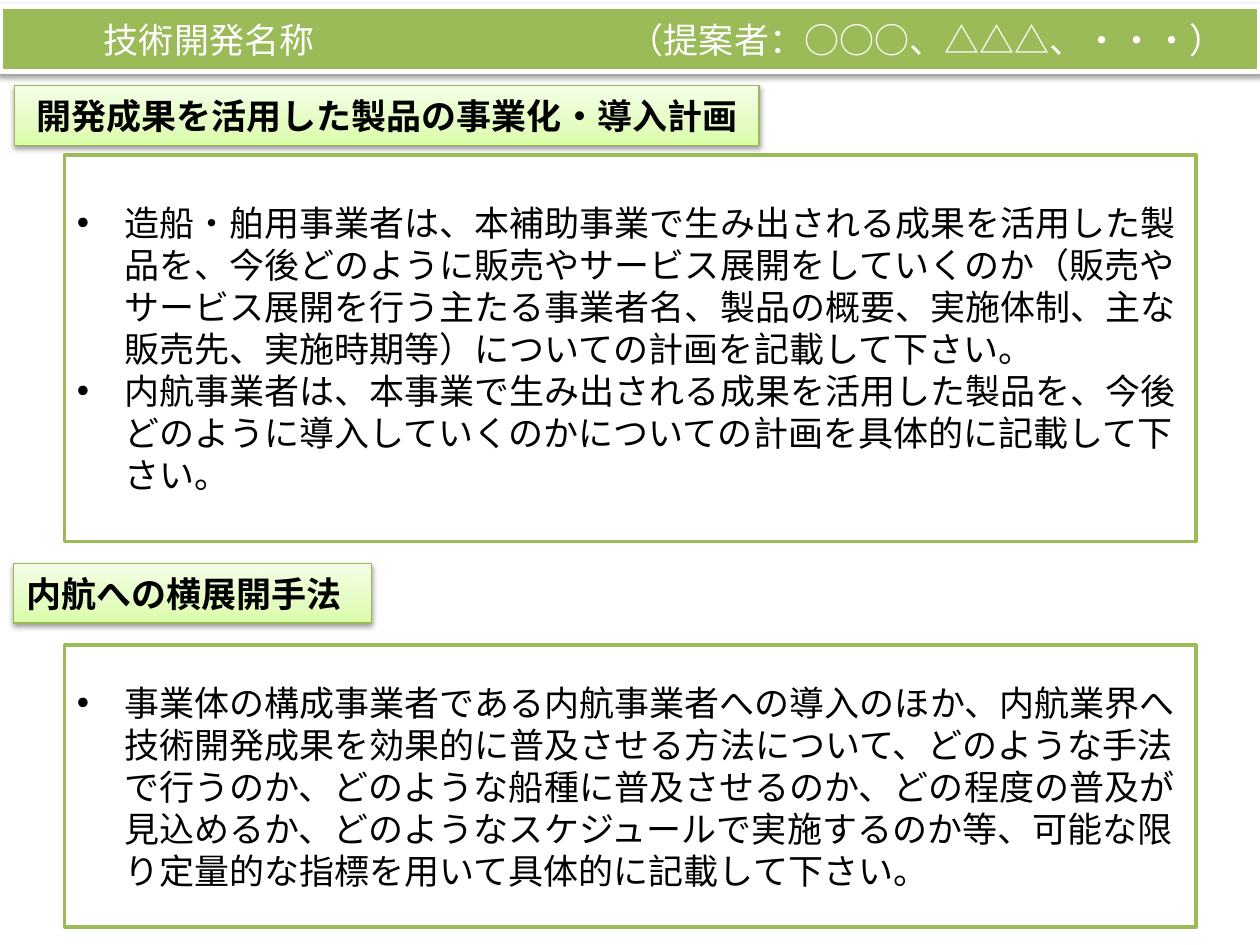
from copy import deepcopy

from lxml.etree import SubElement
from pptx import Presentation
from pptx.dml.color import RGBColor
from pptx.enum.shapes import MSO_SHAPE
from pptx.enum.text import MSO_ANCHOR, PP_ALIGN
from pptx.oxml.ns import qn
from pptx.util import Pt

GREEN = "9BBB59"
HEADING_STOPS = [(0, "DAFDA7"), (0.35, "E4FCC2"), (1, "F5FFE7")]
PLAN = [
    "造船・舶用事業者は、本補助事業で生み出される成果を活用した製品を、今後どのように販売やサービス展開をしていくのか"
    "（販売やサービス展開を行う主たる事業者名、製品の概要、実施体制、主な販売先、実施時期等）"
    "についての計画を記載して下さい。",
    "内航事業者は、本事業で生み出される成果を活用した製品を、今後どのように導入していくのかについての計画を"
    "具体的に記載して下さい。",
]
ROLLOUT = [
    "事業体の構成事業者である内航事業者への導入のほか、内航業界へ技術開発成果を効果的に普及させる方法について、"
    "どのような手法で行うのか、どのような船種に普及させるのか、どの程度の普及が見込めるか、"
    "どのようなスケジュールで実施するのか等、可能な限り定量的な指標を用いて具体的に記載して下さい。",
]


def rgb(color):
    return RGBColor.from_string(color)


def add_box(slide, left, top, width, height, line, weight):
    s = slide.shapes.add_shape(MSO_SHAPE.RECTANGLE, Pt(left), Pt(top), Pt(width), Pt(height))
    s.shadow.inherit = False
    s.line.color.rgb = rgb(line)
    s.line.width = Pt(weight)
    s.text_frame.word_wrap = True
    s.text_frame.vertical_anchor = MSO_ANCHOR.MIDDLE
    return s


def fill_solid(s, color):
    s.fill.solid()
    s.fill.fore_color.rgb = rgb(color)


def fill_gradient(s, stops):
    """Fill from bottom to top with three (position, colour) stops."""
    s.fill.gradient()
    s.fill.gradient_angle = 90
    gs_list = s.fill._xPr.find(qn("a:gradFill")).find(qn("a:gsLst"))
    gs_list.insert(1, deepcopy(gs_list[0]))
    for stop, (position, color) in zip(s.fill.gradient_stops, stops):
        stop.position = position
        stop.color.rgb = rgb(color)


def add_shadow(s):
    effects = s._element.spPr.find(qn("a:effectLst"))
    shadow = SubElement(effects, qn("a:outerShdw"), blurRad=str(Pt(3.1)), dist=str(Pt(1.6)),
                        dir="5400000", rotWithShape="0")
    color = SubElement(shadow, qn("a:srgbClr"), val="000000")
    SubElement(color, qn("a:alpha"), val="38000")


def add_run(p, text, color="000000", bold=False):
    r = p.add_run()
    r.text = text
    r.font.name = "Calibri"
    r.font.size = Pt(20)
    r.font.bold = bold
    r.font.color.rgb = rgb(color)


def add_title(slide, name, proposer):
    s = add_box(slide, 0, 3.6, 720, 37.4, "FFFFFF", 3)
    fill_solid(s, GREEN)
    add_shadow(s)
    tf = s.text_frame
    tf.margin_left = Pt(59.4)
    p = tf.paragraphs[0]
    p.alignment = PP_ALIGN.LEFT
    tabs = SubElement(p._p.get_or_add_pPr(), qn("a:tabLst"))
    SubElement(tabs, qn("a:tab"), pos=str(Pt(300)), algn="l")
    add_run(p, f"{name}\t{proposer}", "FFFFFF")


def add_heading(slide, left, top, width, text, align):
    s = add_box(slide, left, top, width, 34, "98B955", 0.75)
    fill_gradient(s, HEADING_STOPS)
    add_shadow(s)
    p = s.text_frame.paragraphs[0]
    p.alignment = align
    add_run(p, text, bold=True)


def add_bullet(p):
    pPr = p._p.get_or_add_pPr()
    pPr.set("marL", str(Pt(27)))
    pPr.set("indent", str(Pt(-27)))
    SubElement(pPr, qn("a:buFont"), typeface="Arial")
    SubElement(pPr, qn("a:buChar"), char="•")


def add_body(slide, top, height, items):
    s = add_box(slide, 36.8, top, 646.6, height, GREEN, 2)
    fill_solid(s, "FFFFFF")
    tf = s.text_frame
    for i, text in enumerate(items):
        p = tf.add_paragraph() if i else tf.paragraphs[0]
        p.alignment = PP_ALIGN.LEFT
        add_bullet(p)
        add_run(p, text)


def main():
    prs = Presentation()
    prs.slide_width, prs.slide_height = Pt(720), Pt(540)
    slide = prs.slides.add_slide(prs.slide_layouts[6])
    add_title(slide, "技術開発名称", "（提案者：○○○、△△△、・・・）")
    add_heading(slide, 8.4, 49, 425.4, "開発成果を活用した製品の事業化・導入計画", PP_ALIGN.CENTER)
    add_body(slide, 88.6, 221, PLAN)
    add_heading(slide, 7.9, 322, 204.6, "内航への横展開手法", PP_ALIGN.LEFT)
    add_body(slide, 368.6, 161.2, ROLLOUT)
    prs.save("out.pptx")


if __name__ == "__main__":
    main()
